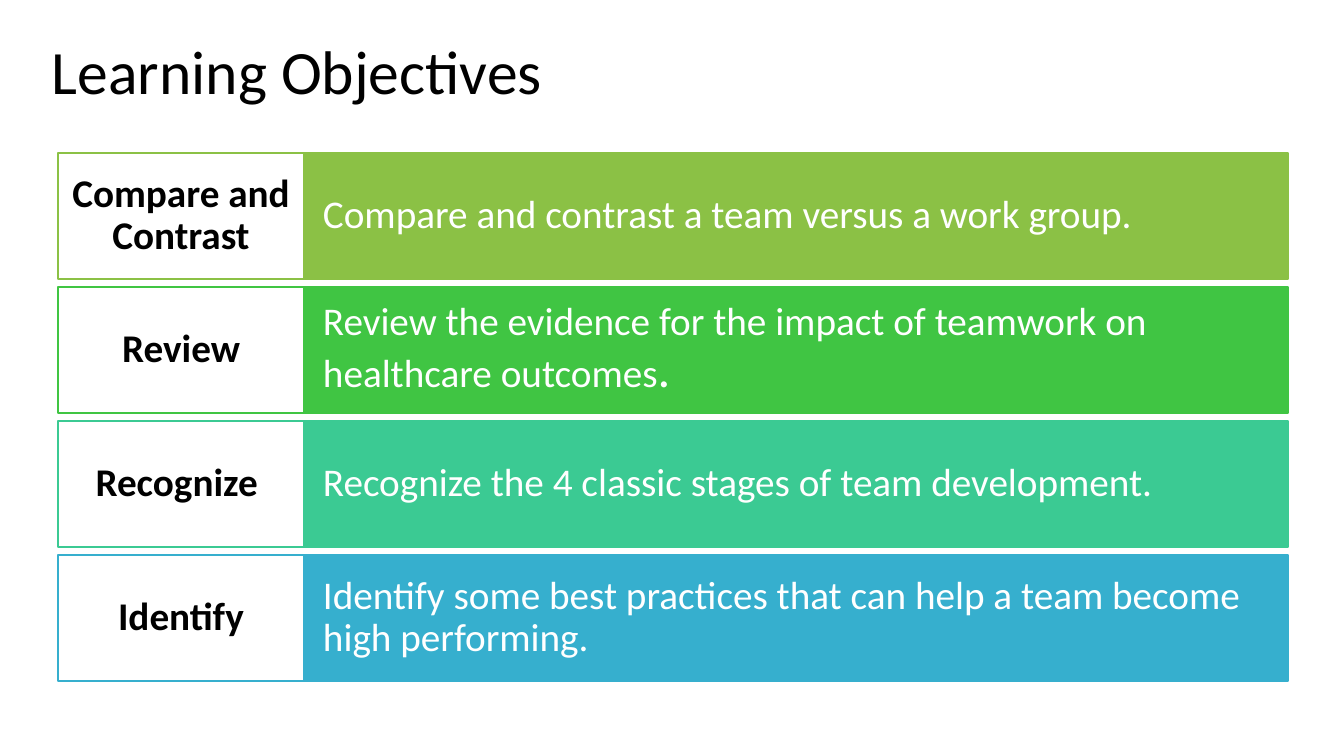
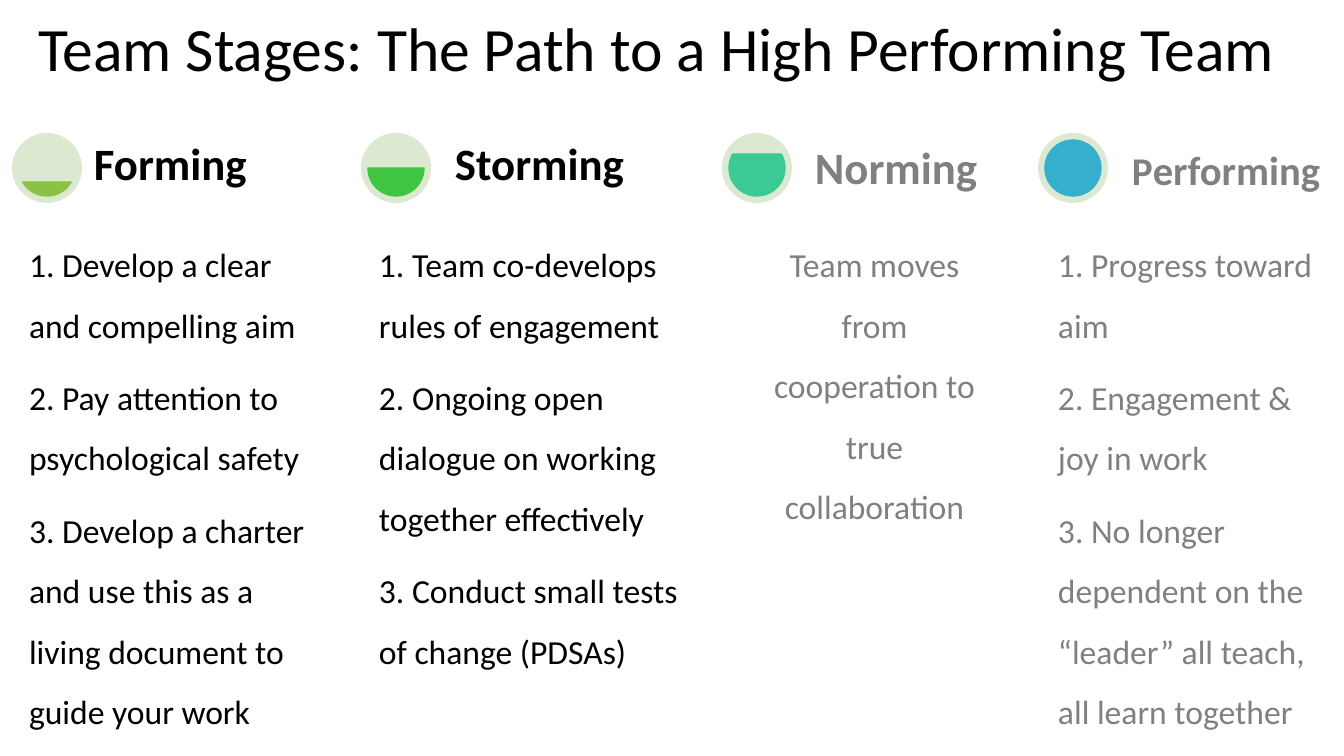
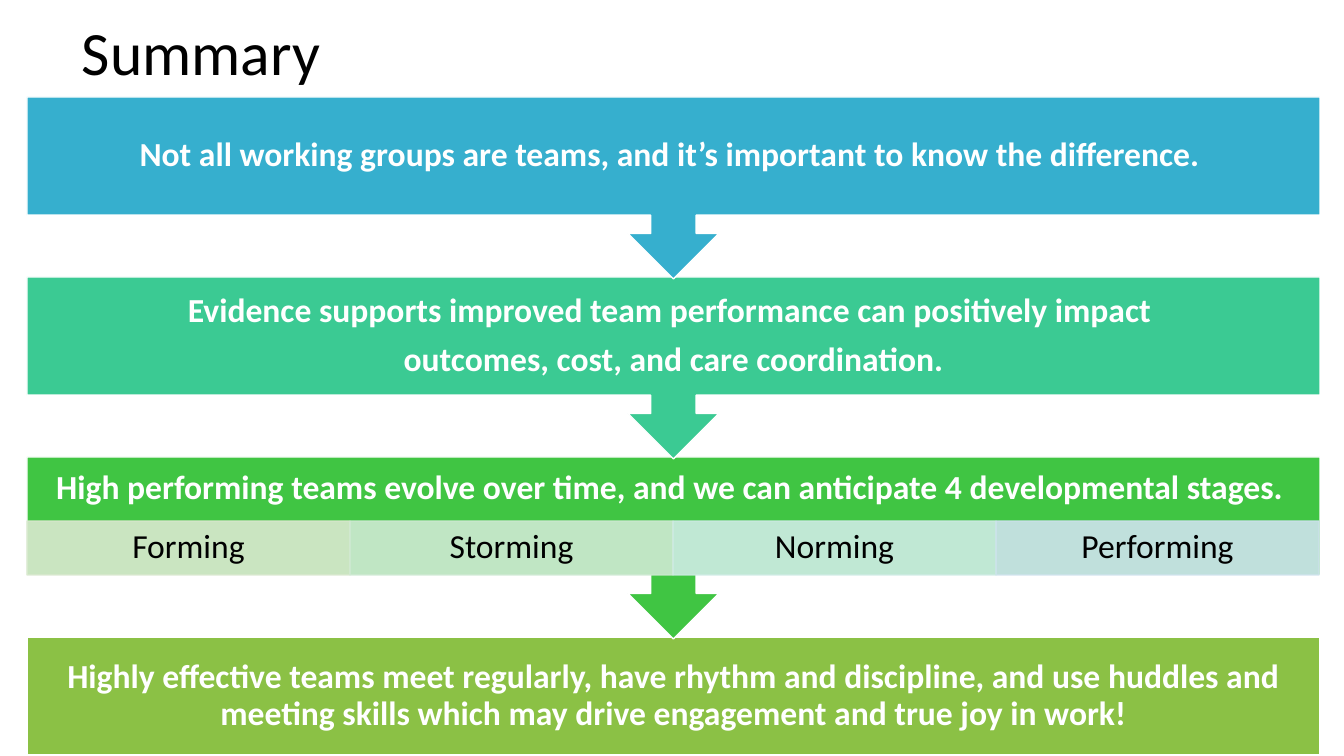
from lxml import etree
from pptx import Presentation
from pptx import util as u
from pptx.dml.color import RGBColor
from pptx.enum import shapes, text
from pptx.oxml.ns import qn

PX = 914400 / 100.8
FONT = "Calibri"
HUES = {
    "lime": "8BC145", "green": "40C543", "mint": "3BCA93", "blue": "36AFCE",
    "pale lime": "DAE9CF", "pale green": "CFEAD3",
    "pale mint": "CEECE4", "pale blue": "CEE3ED",
    "white": "FFFFFF", "black": "000000", "grey": "808080",
}
RGB = {name: RGBColor.from_string(code) for name, code in HUES.items()}
KIND = shapes.MSO_SHAPE
LEFT, MID = text.PP_ALIGN.LEFT, text.PP_ALIGN.CENTER
TOP, CENTRE, BASE = (text.MSO_ANCHOR.TOP, text.MSO_ANCHOR.MIDDLE,
                     text.MSO_ANCHOR.BOTTOM)


def px(*sizes):
    return [round(size * PX) for size in sizes]


def draw(slide, kind, place, fill, line=None):
    shape = slide.shapes.add_shape(kind, *px(*place))
    shape.shadow.inherit = False
    shape.fill.solid()
    shape.fill.fore_color.rgb = RGB[fill]
    if line:
        shape.line.color.rgb = RGB[line]
        shape.line.width = u.Pt(1)
    else:
        shape.line.fill.background()
    return shape


def write(shape, paras, hue, bold=False, align=LEFT, anchor=CENTRE,
          lead=0.9, pad=(10, 5, 10, 5)):
    """Fill a shape with paragraphs, each a list of (words, point size) runs."""
    frame = shape.text_frame
    frame.word_wrap = True
    frame.auto_size = text.MSO_AUTO_SIZE.NONE
    frame.vertical_anchor = anchor
    (frame.margin_left, frame.margin_top,
     frame.margin_right, frame.margin_bottom) = px(*pad)
    for i, runs in enumerate(paras):
        para = frame.add_paragraph() if i else frame.paragraphs[0]
        para.alignment = align
        para.line_spacing = lead
        para.space_before = u.Pt(0)
        para.space_after = u.Pt(runs[0][1] * 0.35)
        props = para._p.get_or_add_pPr()
        props.set("marL", "0")
        props.set("indent", "0")
        etree.SubElement(props, qn("a:buNone"))
        for words, size in runs:
            run = para.add_run()
            run.text = words
            run.font.name = FONT
            run.font.size = u.Pt(size)
            run.font.bold = bold
            run.font.color.rgb = RGB[hue]


deck = Presentation()
deck.slide_width, deck.slide_height = px(1344, 756)

# Slides and titles: layout number, title, place, line spacing
TITLES = [
    (5, "Learning Objectives", (42, 2, 869, 146), 0.9),
    (4, "Team Stages: The Path to a High Performing Team",
     (28, 4, 1287, 85), 1.0),
    (5, "Summary", (72, -17, 1159, 146), 0.9),
]
pages = []
for layout, words, place, lead in TITLES:
    page = deck.slides.add_slide(deck.slide_layouts[layout])
    title = page.shapes.title
    title.left, title.top, title.width, title.height = px(*place)
    write(title, [[(words, 44)]], "black", lead=lead)
    pages.append(page)
goals, stages, recap = pages

# Learning objectives
GOALS = [
    ("lime", "Compare and Contrast",
     [("Compare and contrast a team versus a work group.", 28)]),
    ("green", "Review",
     [("Review the evidence for the impact of teamwork on "
       "healthcare outcomes", 28), (".", 36)]),
    ("mint", "Recognize ",
     [("Recognize the 4 classic stages of team development.", 28)]),
    ("blue", "Identify",
     [("Identify some best practices that can help a team become "
       "high performing.", 28)]),
]
for i, (hue, verb, runs) in enumerate(GOALS):
    top = 153 + 134 * i
    bar = draw(goals, KIND.RECTANGLE, (304, top, 984, 126), hue, hue)
    write(bar, [runs], "white", pad=(19, 0, 19, 0))
    label = draw(goals, KIND.RECTANGLE, (58, top, 246, 126), "white", hue)
    write(label, [[(verb, 28)]], "black", bold=True, align=MID,
          pad=(13, 12, 13, 12))

# Team stages: hue, ink, ring left, chord angles, heading left, heading runs,
# heading anchor, list place, list alignment, list items
STAGES = [
    ("lime", "black", 12, (18, 90), 85, [("Forming", 32)], TOP,
     (19, 219, 313, 521), LEFT,
     ["1. Develop a clear and compelling aim",
      "2. Pay attention to psychological safety",
      "3. Develop a charter and use this as a living document to "
      "guide your work"]),
    ("green", "black", 361, (0, 108), 446, [("Storming", 32)], TOP,
     (369, 219, 343, 460), LEFT,
     ["1. Team co-develops rules of engagement",
      "2. Ongoing open dialogue on working together effectively",
      "3. Conduct small tests of change (PDSAs)"]),
    ("mint", "grey", 722, (198, 126), 806, [("Norming", 32)], BASE,
     (757, 219, 235, 309), MID,
     ["Team moves from cooperation to true collaboration"]),
    ("blue", "grey", 1038, (162, 162), 1123, [("P", 28), ("erforming", 29)],
     BASE, (1048, 219, 282, 521), LEFT,
     ["1. Progress toward aim",
      "2. Engagement & joy in work",
      "3. No longer dependent on the “leader” all teach, "
      "all learn together"]),
]
bodies = list(stages.placeholders)[1:]
for body, stage in zip(bodies, STAGES):
    hue, ink, left, arc, start, name, anchor, place, align, items = stage
    draw(stages, KIND.OVAL, (left, 133, 70, 70), "pale lime")
    level = draw(stages, KIND.CHORD, (left + 7, 140, 56, 56), hue, hue)
    level.adjustments[0], level.adjustments[1] = arc
    head = stages.shapes.add_textbox(*px(start, 133, 207, 70))
    write(head, [name], ink, bold=True, anchor=anchor, pad=(9, 9, 9, 9))
    body.left, body.top, body.width, body.height = px(*place)
    write(body, [[(item, 24)] for item in items], ink, align=align,
          anchor=TOP, lead=1.5)

# Summary, drawn upwards so that each arrow tip lies over the next bar
POINTS = [
    ("blue", ["Not all working groups are teams, and it’s important to "
              "know the difference. "]),
    ("mint", ["Evidence supports improved team performance can positively "
              "impact ", "outcomes, cost, and care coordination."]),
    ("green", ["High performing teams evolve over time, and we can "
               "anticipate 4 developmental stages. "]),
    ("lime", ["Highly effective teams meet regularly, have rhythm and "
              "discipline, and use huddles and meeting skills which may "
              "drive engagement and true joy in work!"]),
]
PARTS = ["Forming", "Storming", "Norming", "Performing"]
TINTS = ["pale lime", "pale green", "pale mint", "pale blue"]
for i, (hue, lines) in reversed(list(enumerate(POINTS))):
    last, split = i == 3, hue == "green"
    kind = KIND.RECTANGLE if last else KIND.DOWN_ARROW_CALLOUT
    step = draw(recap, kind, (27, 97 + 180 * i, 1293, 118 if last else 182),
                hue, "white")
    write(step, [[(line, 24)] for line in lines], "white", bold=True,
          align=MID, pad=(19, 0, 19, 54 if split else 0))
    if split:
        for j, (part, tint) in enumerate(zip(PARTS, TINTS)):
            cell = draw(recap, KIND.RECTANGLE, (27 + 323 * j, 521, 323, 54),
                        tint, tint)
            for tone in cell._element.spPr.iter(qn("a:srgbClr")):
                etree.SubElement(tone, qn("a:alpha"), val="90000")
            write(cell, [[(part, 24)]], "black", align=MID,
                  pad=(19, 3, 19, 3))

deck.save("out.pptx")
